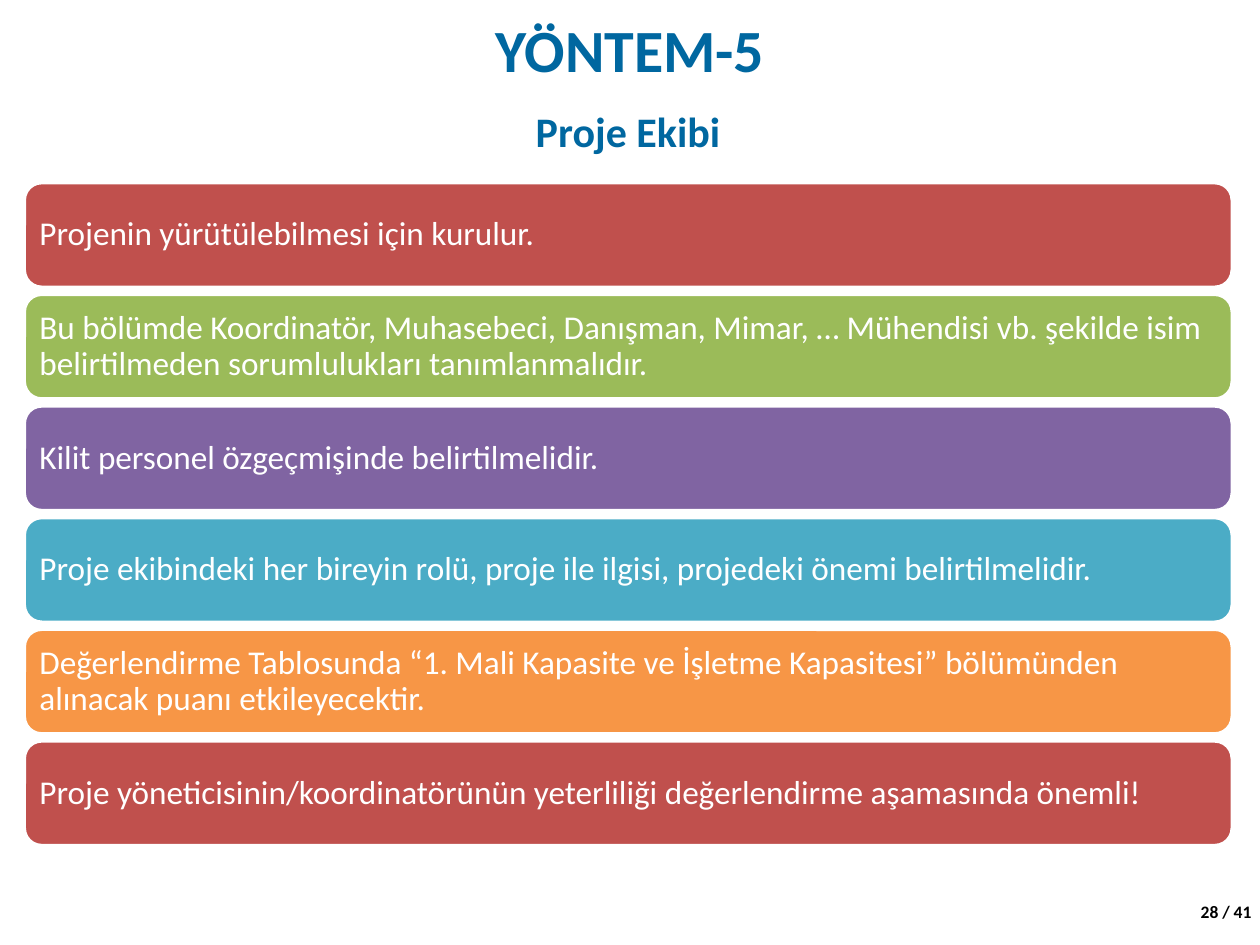
from dataclasses import dataclass

import pptx
import pptx.dml.color
import pptx.enum.shapes
import pptx.enum.text
import pptx.util

Pt = pptx.util.Pt
ALIGN = pptx.enum.text.PP_ALIGN
MIDDLE = pptx.enum.text.MSO_ANCHOR.MIDDLE


@dataclass(frozen=True)
class Theme:
    """Fonts, type sizes and colours of the slide."""
    font: str = "Calibri"
    title_size: float = 34.2
    subtitle_size: float = 24
    band_size: float = 19
    number_size: float = 10
    heading: str = "0067A0"
    ink: str = "000000"
    paper: str = "FFFFFF"
    bands: tuple = ("C0504D", "9BBB59", "8064A2", "4BACC6", "F79646")


THEME = Theme()

TEAM_POINTS = (
    "Projenin yürütülebilmesi için kurulur.",
    "Bu bölümde Koordinatör, Muhasebeci, Danışman, Mimar, … Mühendisi vb. şekilde isim "
    "belirtilmeden sorumlulukları tanımlanmalıdır.",
    "Kilit personel özgeçmişinde belirtilmelidir.",
    "Proje ekibindeki her bireyin rolü, proje ile ilgisi, projedeki önemi belirtilmelidir.",
    "Değerlendirme Tablosunda “1. Mali Kapasite ve İşletme Kapasitesi” bölümünden "
    "alınacak puanı etkileyecektir.",
    "Proje yöneticisinin/koordinatörünün yeterliliği değerlendirme aşamasında önemli!",
)


def rgb(value):
    """Turn a hex string into a colour."""
    return pptx.dml.color.RGBColor.from_string(value)


def write(frame, wording, size, color, bold=False, align=ALIGN.LEFT):
    """Write one formatted run into the first paragraph of a frame."""
    paragraph = frame.paragraphs[0]
    paragraph.alignment = align
    run = paragraph.add_run()
    run.text = wording
    run.font.name = THEME.font
    run.font.size = Pt(size)
    run.font.bold = bold
    run.font.color.rgb = rgb(color)
    return paragraph


def place_title(slide, box, wording):
    """Move and fill the title placeholder."""
    title = slide.shapes.title
    title.left, title.top, title.width, title.height = map(Pt, box)
    title.text_frame.vertical_anchor = MIDDLE
    write(title.text_frame, wording, THEME.title_size, THEME.heading, True, ALIGN.CENTER)


def place_subtitle(slide, box, wording):
    """Place the centred subtitle in its box."""
    subtitle = slide.shapes.add_textbox(*map(Pt, box)).text_frame
    subtitle.word_wrap = True
    subtitle.vertical_anchor = MIDDLE
    write(subtitle, wording, THEME.subtitle_size, THEME.heading, True, ALIGN.CENTER)


def place_bands(slide, box, points, gap=4, inset=5.76):
    """Stack one coloured band per point, equally spaced in the box."""
    left, top, width, height = box
    band_height = (height - gap * (len(points) - 1)) / len(points)
    for index, point in enumerate(points):
        band = slide.shapes.add_shape(
            pptx.enum.shapes.MSO_SHAPE.ROUNDED_RECTANGLE,
            Pt(left), Pt(top + index * (band_height + gap)), Pt(width), Pt(band_height))
        band.shadow.inherit = False
        band.fill.solid()
        band.fill.fore_color.rgb = rgb(THEME.bands[index % len(THEME.bands)])
        band.line.color.rgb = rgb(THEME.paper)
        band.line.width = Pt(2)
        frame = band.text_frame
        frame.word_wrap = True
        frame.vertical_anchor = MIDDLE
        frame.margin_left = frame.margin_right = Pt(inset)
        frame.margin_top = frame.margin_bottom = Pt(inset)
        write(frame, point, THEME.band_size, THEME.paper).line_spacing = 0.9


def place_page_number(slide, box, wording):
    """Place the page count in the lower corner."""
    number = slide.shapes.add_textbox(*map(Pt, box)).text_frame
    number.word_wrap = False
    write(number, wording, THEME.number_size, THEME.ink, True)


def main():
    """Build the slide and save it."""
    deck = pptx.Presentation()
    deck.slide_width, deck.slide_height = Pt(720), Pt(540)
    slide = deck.slides.add_slide(deck.slide_layouts[5])
    place_title(slide, (36, 5, 648, 45.4), "YÖNTEM-5")
    place_subtitle(slide, (2.9, 51.8, 712, 45.4), "Proje Ekibi")
    place_bands(slide, (13.9, 104.4, 690.3, 378.8), TEAM_POINTS)
    place_page_number(slide, (679, 511.2, 49, 21.6), "28 / 41")
    deck.save("out.pptx")


if __name__ == "__main__":
    main()
